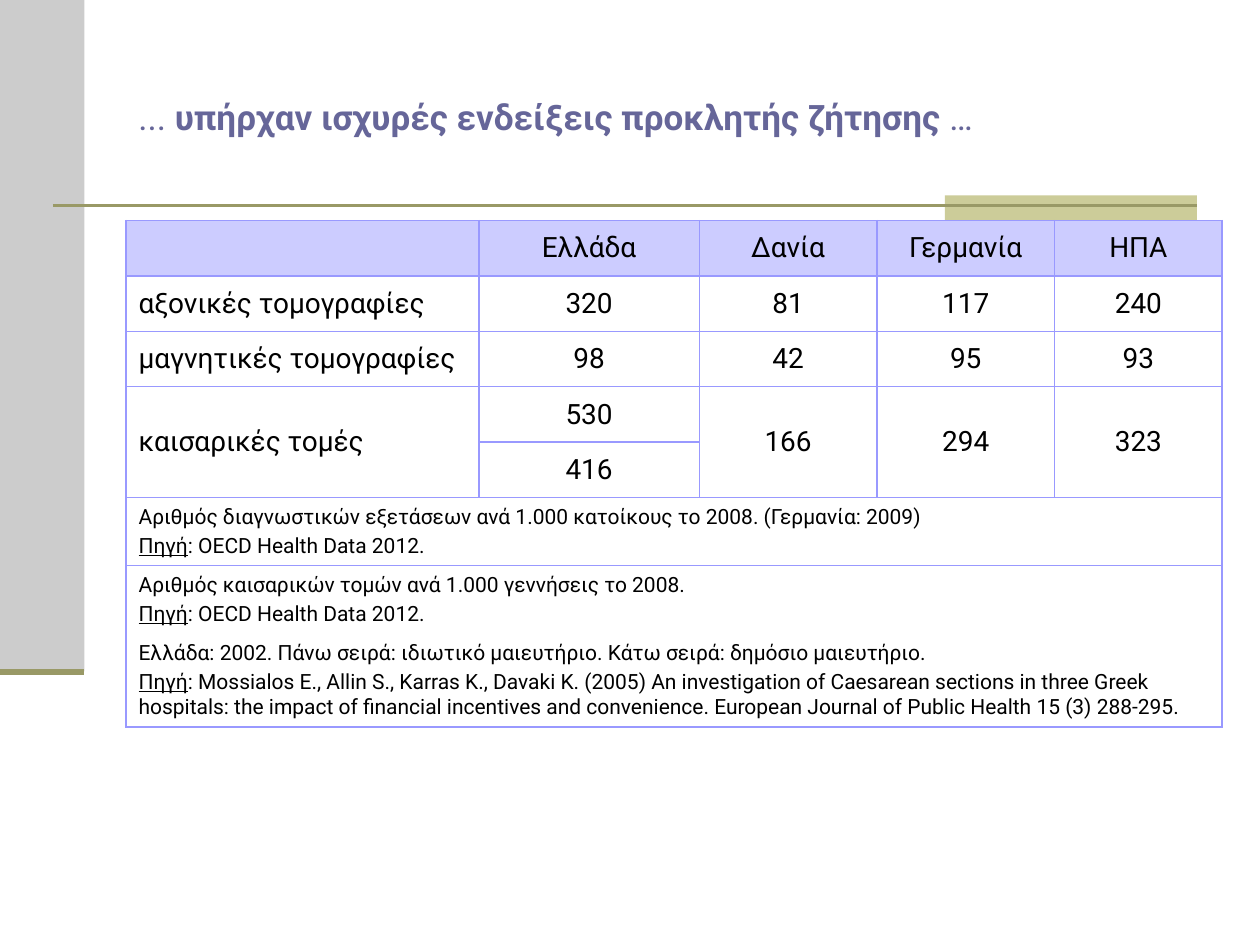
from lxml import etree
from pptx import Presentation
from pptx.dml.color import RGBColor
from pptx.enum import shapes, text
from pptx.oxml import parse_xml
from pptx.oxml.ns import nsdecls, qn
from pptx.util import Inches, Pt

COLORS = {
    "sidebar": "CCCCCC",
    "accent": "CCCC99",
    "rule": "999966",
    "title": "666699",
    "text": "000000",
    "header": "CCCCFF",
    "body": "FFFFFF",
    "border": "9999FF",
}
FONT = "Roboto"


def add_run(paragraph, wording, size, color, bold=False, underline=False):
    run = paragraph.add_run()
    run.text = wording
    run.font.name = FONT
    run.font.size = Pt(size)
    run.font.bold = bold
    run.font.underline = underline
    run.font.color.rgb = RGBColor.from_string(COLORS[color])


def set_borders(cell, hidden):
    properties = cell._tc.get_or_add_tcPr()
    for position, side in enumerate("LRTB"):
        if side in hidden:
            paint = "<a:noFill/>"
        else:
            paint = f'<a:solidFill><a:srgbClr val="{COLORS["border"]}"/></a:solidFill>'
        line = parse_xml(f'<a:ln{side} {nsdecls("a")} w="12700">{paint}</a:ln{side}>')
        properties.insert(position, line)


prs = Presentation()
prs.slide_width = Inches(10)
prs.slide_height = Inches(7.5)
slide = prs.slides.add_slide(prs.slide_layouts[6])

for left, top, width, height, color in [
    (0, 0, 0.67, 5.33, "sidebar"),
    (7.5, 1.55, 2, 0.2, "accent"),
]:
    block = slide.shapes.add_shape(
        shapes.MSO_SHAPE.RECTANGLE, Inches(left), Inches(top), Inches(width), Inches(height)
    )
    block.shadow.inherit = False
    block.fill.solid()
    block.fill.fore_color.rgb = RGBColor.from_string(COLORS[color])
    block.line.fill.background()

for start, end, y, weight in [(0.42, 9.5, 1.63, 1.5), (0, 0.67, 5.33, 3.5)]:
    rule = slide.shapes.add_connector(
        shapes.MSO_CONNECTOR.STRAIGHT, Inches(start), Inches(y), Inches(end), Inches(y)
    )
    rule.line.color.rgb = RGBColor.from_string(COLORS["rule"])
    rule.line.width = Pt(weight)
    etree.SubElement(rule._element.spPr, qn("a:effectLst"))

title = slide.shapes.add_textbox(Inches(1), Inches(0.3), Inches(8.5), Inches(1.25)).text_frame
title.word_wrap = True
title.vertical_anchor = text.MSO_ANCHOR.MIDDLE
for wording, bold in [
    ("... ", False),
    ("υπήρχαν ισχυρές ενδείξεις προκλητής ζήτησης", True),
    (" …", False),
]:
    add_run(title.paragraphs[0], wording, 20, "title", bold=bold)

column_widths = [2.8, 1.75, 1.41, 1.41, 1.33]
row_heights = [0.44] * 5 + [0.54, 0.54, 0.74]
figures = [
    ["", "Ελλάδα", "Δανία", "Γερμανία", "ΗΠΑ"],
    ["αξονικές τομογραφίες", "320", "81", "117", "240"],
    ["μαγνητικές τομογραφίες", "98", "42", "95", "93"],
    ["καισαρικές τομές", "530", "166", "294", "323"],
    ["", "416", "", "", ""],
]
notes = [
    (
        "Αριθμός διαγνωστικών εξετάσεων ανά 1.000 κατοίκους το 2008. (Γερμανία: 2009)",
        ": OECD Health Data 2012.",
    ),
    (
        "Αριθμός καισαρικών τομών ανά 1.000 γεννήσεις το 2008.",
        ": OECD Health Data 2012.",
    ),
    (
        "Ελλάδα: 2002. Πάνω σειρά: ιδιωτικό μαιευτήριο. Κάτω σειρά: δημόσιο μαιευτήριο.",
        ": Mossialos E., Allin S., Karras K., Davaki K. (2005) An investigation of "
        "Caesarean sections in three Greek hospitals: the impact of financial incentives "
        "and convenience. European Journal of Public Health 15 (3) 288-295.",
    ),
]
hidden_sides = {6: "B", 7: "T"}

table = slide.shapes.add_table(
    len(row_heights), len(column_widths), Inches(1), Inches(1.75),
    Inches(sum(column_widths)), Inches(sum(row_heights)),
).table
for column, width in zip(table.columns, column_widths):
    column.width = Inches(width)
for row, height in zip(table.rows, row_heights):
    row.height = Inches(height)

for r, row in enumerate(table.rows):
    for cell in row.cells:
        cell.vertical_anchor = text.MSO_ANCHOR.MIDDLE
        cell.fill.solid()
        cell.fill.fore_color.rgb = RGBColor.from_string(COLORS["body" if r else "header"])
        set_borders(cell, hidden_sides.get(r, ""))

for c in (0, 2, 3, 4):
    table.cell(3, c).merge(table.cell(4, c))

for r, values in enumerate(figures):
    for c, value in enumerate(values):
        if value:
            paragraph = table.cell(r, c).text_frame.paragraphs[0]
            paragraph.alignment = text.PP_ALIGN.CENTER if c else text.PP_ALIGN.LEFT
            add_run(paragraph, value, 16, "text")

for r, (note, source) in enumerate(notes, start=len(figures)):
    note_cell = table.cell(r, 0)
    note_cell.merge(table.cell(r, len(column_widths) - 1))
    add_run(note_cell.text_frame.paragraphs[0], note, 12, "text")
    citation = note_cell.text_frame.add_paragraph()
    citation.space_before = Pt(2.4)
    add_run(citation, "Πηγή", 12, "text", underline=True)
    add_run(citation, source, 12, "text")

prs.save("out.pptx")
